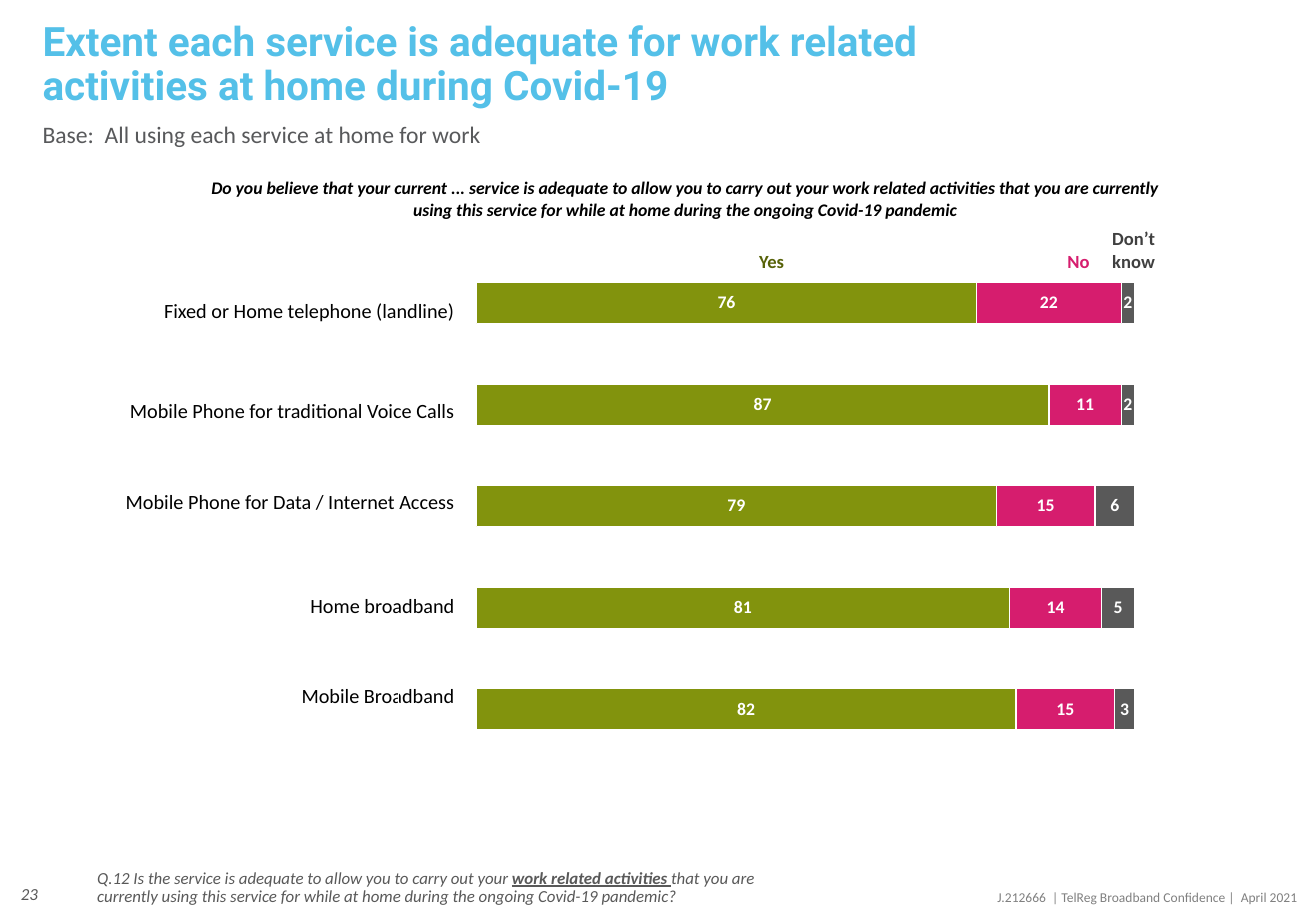
from lxml import etree
from pptx import Presentation
from pptx import util as u
from pptx.chart import data as chart_data
from pptx.dml.color import RGBColor
from pptx.enum import chart as chart_types, text
from pptx.oxml import parse_xml
from pptx.oxml.ns import nsdecls, qn

CELL = u.Inches(0.01)  # the slide is a grid of 1083 columns and 750 rows
COLUMNS, ROWS = 1083, 750
COLORS = {
    "title": "54C0E8", "base": "58595B", "note": "595959", "footer": "808080",
    "black": "000000", "white": "FFFFFF", "yes_text": "576208",
    "yes": "82930D", "no": "D61D6E", "unknown": "595959", "unknown_text": "404040",
}
ANSWERS = [("Series 1", "yes", (76, 87, 79, 81, 82)),
           ("Series 2", "no", (22, 11, 15, 14, 15)),
           ("Series 3", "unknown", (2, 2, 6, 5, 3))]
LEGEND = [("Yes", "yes_text", 458), ("No", "no", 47), ("Don’t know", "unknown_text", 44)]
SERVICES = ["Fixed or Home telephone (landline)", "Mobile Phone for traditional Voice Calls",
            "Mobile Phone for Data / Internet Access", "Home broadband", "Mobile Broadband"]
SERVICE_ROWS = [21, 62, 21, 54, 21, 64, 21, 53, 22]


def color(name):
    return RGBColor.from_string(COLORS[name])


def inside(box, left, top, width, height):
    """Grid place relative to a box, in slide units."""
    return [CELL * n for n in (box[0] + left, box[1] + top, width, height)]


def apply_font(font, ink, **values):
    for name, value in {"name": "Calibri", **values}.items():
        setattr(font, name, value)
    font.color.rgb = color(ink)


def write(frame, spans, ink, size, align=text.PP_ALIGN.LEFT, spacing=1.0, **values):
    """Fill a frame with one paragraph; each span is its text and its own format."""
    para = frame.paragraphs[0]
    layout = {"alignment": align, "line_spacing": spacing, "space_before": u.Pt(0)}
    for name, value in layout.items():
        setattr(para, name, value)
    for wording, extra in spans:
        span = para.add_run()
        span.text = wording
        apply_font(span.font, ink, size=u.Pt(size), **{**values, **extra})


def fill_placeholder(holder, place, spans, ink, size, **values):
    holder.left, holder.top, holder.width, holder.height = place
    frame = holder.text_frame
    frame.auto_size = text.MSO_AUTO_SIZE.NONE
    frame.vertical_anchor = text.MSO_ANCHOR.TOP
    properties = frame.paragraphs[0]._p.get_or_add_pPr()
    for name in ("marL", "indent"):
        properties.set(name, "0")
    etree.SubElement(properties, qn("a:buNone"))
    write(frame, spans, ink, size, spacing=0.9, **values)


def add_text(page, place, wording, ink, size, align, anchor=text.MSO_ANCHOR.TOP, **values):
    frame = page.shapes.add_textbox(*place).text_frame
    frame.word_wrap = True
    frame.vertical_anchor = anchor
    write(frame, [(wording, {})], ink, size, align, **values)


def add_plain_table(page, place, widths, heights):
    table = page.shapes.add_table(len(heights), len(widths), *place).table
    table.first_row = table.horz_banding = False
    for column, width in zip(table.columns, widths):
        column.width = CELL * width
    for row, height in zip(table.rows, heights):
        row.height = CELL * height
    for cell in table.iter_cells():
        cell.fill.background()
        cell.margin_left = cell.margin_top = cell.margin_right = CELL
        cell.margin_bottom = 0
    return table


def add_heading(page, box):
    fill_placeholder(
        page.shapes.title, inside(box, 0, 0, 870, 41),
        [("Extent each service is adequate for work related "
          "activities at home during Covid-19", {})],
        "title", 24, name="Roboto", bold=True)
    fill_placeholder(
        page.placeholders[1], inside(box, 0, 83, 607, 35),
        [("Base:  All using each service at home for work", {})], "base", 14)


def add_bars(page, place):
    """Stacked bars, with an empty category between services."""
    data = chart_data.CategoryChartData()
    count = 2 * len(SERVICES) - 1
    data.categories = [str(n + 1) for n in range(count)]
    for name, _, shares in ANSWERS:
        data.add_series(name, [None if n % 2 else shares[n // 2] for n in range(count)])
    chart = page.shapes.add_chart(chart_types.XL_CHART_TYPE.BAR_STACKED, *place, data).chart
    chart.has_legend = chart.has_title = False
    apply_font(chart.font, "black", size=u.Pt(18))
    chart.category_axis.reverse_order = True
    chart.category_axis.visible = chart.value_axis.visible = False
    chart.value_axis.has_major_gridlines = False
    chart.value_axis.minimum_scale, chart.value_axis.maximum_scale = 0, 120
    plot = chart.plots[0]
    plot.gap_width, plot.overlap, plot.vary_by_categories = 23, 100, False
    for series, (_, ink, _) in zip(plot.series, ANSWERS):
        series.format.fill.solid()
        series.format.fill.fore_color.rgb = color(ink)
        series.format.line.color.rgb = color("white")
        series.format.line.width = u.Pt(0.75)
        labels = series.data_labels
        labels.show_value = True
        labels.position = chart_types.XL_LABEL_POSITION.CENTER
        apply_font(labels.font, "white", size=u.Pt(10.5), bold=True)
    area = chart._chartSpace.chart.plotArea
    for old in area.findall(qn("c:layout")):
        area.remove(old)
    settings = [("layoutTarget", "inner"), ("xMode", "edge"), ("yMode", "edge"),
                ("x", 0.33), ("y", 0.07), ("w", 0.67), ("h", 0.89)]
    items = "".join(f'<c:{name} val="{value}"/>' for name, value in settings)
    area.insert(0, parse_xml(f'<c:layout {nsdecls("c")}><c:manualLayout>{items}'
                             '</c:manualLayout></c:layout>'))


def add_results(page, box):
    """Question, bars, answer headings and service names."""
    add_bars(page, inside(box, 0, 57, 970, 423))
    widths = [width for _, _, width in LEGEND]
    legend = add_plain_table(page, inside(box, 334, 39, sum(widths), 44), widths, [44])
    for cell, (wording, ink, _) in zip(legend.iter_cells(), LEGEND):
        cell.vertical_anchor = text.MSO_ANCHOR.BOTTOM
        write(cell.text_frame, [(wording, {})], ink, 11, text.PP_ALIGN.CENTER, bold=True)
    add_text(
        page, inside(box, 92, -1, 800, 47),
        "Do you believe that your current ... service is adequate to allow you to carry out "
        "your work related activities that you are currently using this service for while "
        "at home during the ongoing Covid-19 pandemic",
        "black", 10.5, text.PP_ALIGN.CENTER, bold=True, italic=True)
    names = add_plain_table(page, inside(box, 18, 103, 285, sum(SERVICE_ROWS)),
                            [285], SERVICE_ROWS)
    for index, service in enumerate(SERVICES):
        write(names.cell(2 * index, 0).text_frame, [(service, {})],
              "black", 12, text.PP_ALIGN.RIGHT)
    add_plain_table(page, inside(box, 256, 411, 59, 47), [59], [23, 24])


def add_footer(page, box):
    fill_placeholder(
        page.placeholders[2], inside(box, 76, 0, 610, 31),
        [("Q.12 Is the service is adequate to allow you to carry out your ", {}),
         ("work related activities ", {"bold": True, "underline": True}),
         ("that you are currently using this service for while at home during "
          "the ongoing Covid-19 pandemic?", {})],
        "note", 10, italic=True)
    add_text(page, inside(box, 0, 5, 47, 40), "23", "note", 10, text.PP_ALIGN.RIGHT,
             text.MSO_ANCHOR.MIDDLE, italic=True)
    add_text(page, inside(box, 800, 16, 284, 24),
             "J.212666  | TelReg Broadband Confidence |  April 2021",
             "footer", 8, text.PP_ALIGN.RIGHT)


def main():
    deck = Presentation()
    deck.slide_width, deck.slide_height = CELL * COLUMNS, CELL * ROWS
    page = deck.slides.add_slide(deck.slide_layouts.get_by_name("Two Content"))
    add_heading(page, (25, 13))
    add_results(page, (72, 142))
    add_footer(page, (-6, 711))
    deck.save("out.pptx")


if __name__ == "__main__":
    main()
